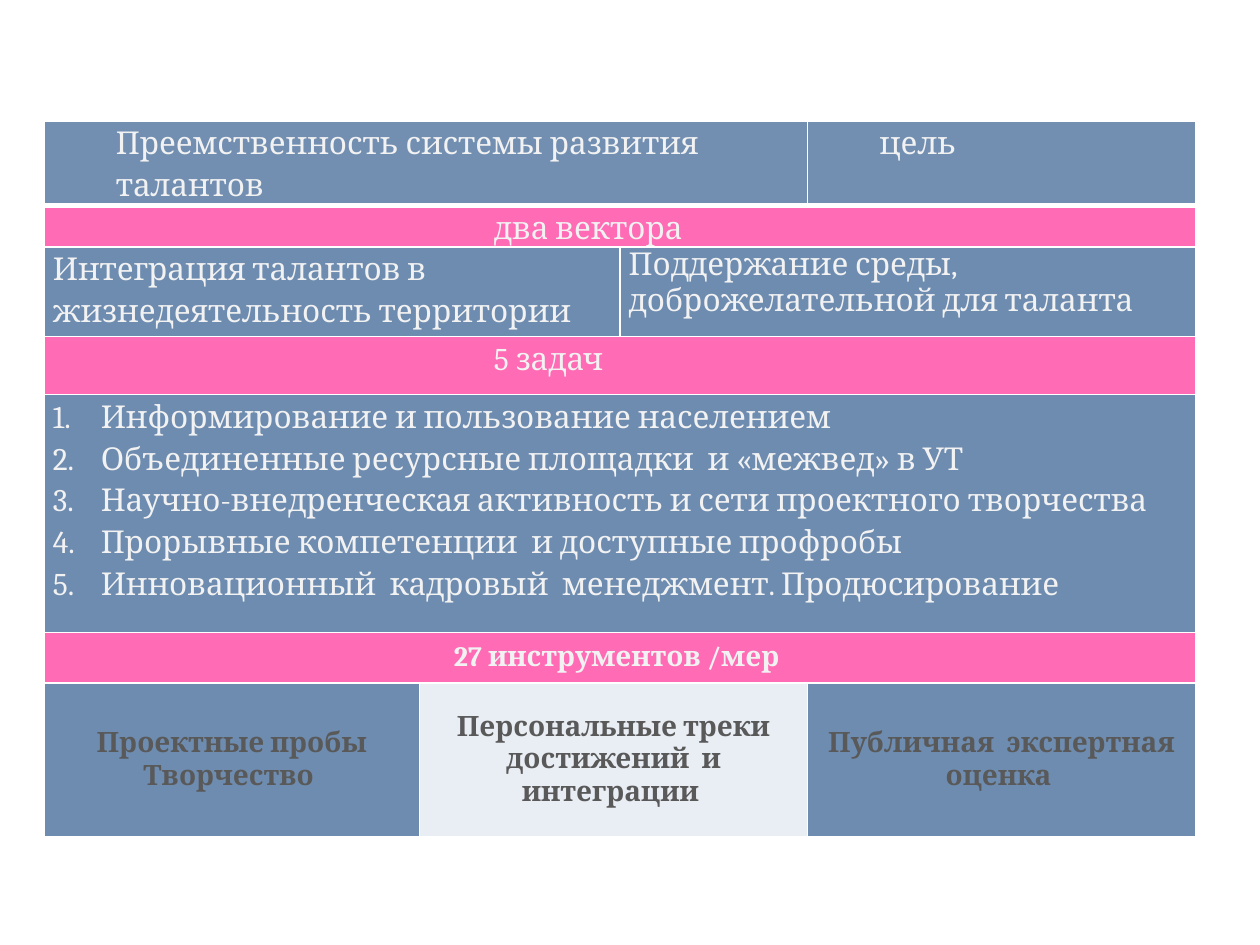
from dataclasses import dataclass

from lxml import etree
from pptx import Presentation
from pptx.dml.color import RGBColor
from pptx.enum.text import MSO_ANCHOR, PP_ALIGN
from pptx.oxml.ns import qn
from pptx.table import Table, _Cell
from pptx.util import Inches, Pt

MIDDLE, TOP = MSO_ANCHOR.MIDDLE, MSO_ANCHOR.TOP
CENTER, LEFT = PP_ALIGN.CENTER, PP_ALIGN.LEFT
BLUE = RGBColor(0x37, 0x60, 0x92)
PINK = RGBColor(0xFF, 0x33, 0x99)
PALE = RGBColor(0xE9, 0xED, 0xF4)
WHITE = RGBColor(0xFF, 0xFF, 0xFF)
LIGHT = RGBColor(0xF2, 0xF2, 0xF2)
GRAY = RGBColor(0x59, 0x59, 0x59)
FONT = "Cambria"
COLS = (2.98, 1.59, 1.49, 3.08)
ROWS = (0.67, 0.31, 0.71, 0.46, 1.89, 0.4, 1.22)


@dataclass(frozen=True)
class Style:
    size: int = 18
    color: RGBColor = LIGHT
    bold: bool = False
    align: PP_ALIGN = LEFT
    anchor: MSO_ANCHOR = TOP
    space: float = 1.15
    indent: float = 0
    hang: float = 0


@dataclass(frozen=True)
class Block:
    row: int
    col: int
    span: int
    lines: tuple[str, ...]
    style: Style
    fill: RGBColor = BLUE
    alpha: int = 72


BODY = Style()
GOAL = Style(indent=0.5)
HEAD = Style(indent=3.5)
TIGHT = Style(space=1.0)
LIST = Style(indent=0.38, hang=0.38)
TOOLS = Style(16, LIGHT, True, CENTER, MIDDLE, 1.0)
TOOL = Style(16, GRAY, True, CENTER, MIDDLE, 1.0)

TASKS = (
    "Информирование и пользование населением",
    "Объединенные ресурсные площадки  и «межвед» в УТ",
    "Научно-внедренческая активность и сети проектного творчества",
    "Прорывные компетенции  и доступные профробы",
    "Инновационный  кадровый  менеджмент. Продюсирование",
)
BLOCKS = (
    Block(0, 0, 3, ("Преемственность системы развития талантов",), GOAL, alpha=70),
    Block(0, 3, 1, ("цель",), GOAL, alpha=70),
    Block(1, 0, 4, ("два вектора",), HEAD, PINK),
    Block(2, 0, 2, ("Интеграция талантов в жизнедеятельность территории",), BODY),
    Block(2, 2, 2, ("Поддержание среды, доброжелательной для таланта",), TIGHT),
    Block(3, 0, 4, ("5 задач",), HEAD, PINK),
    Block(4, 0, 4, TASKS, LIST),
    Block(5, 0, 4, ("27 инструментов /мер ",), TOOLS, PINK),
    Block(6, 0, 1, ("Проектные пробы", "Творчество "), TOOL),
    Block(6, 1, 2, ("Персональные треки достижений  и интеграции ",), TOOL, PALE, 100),
    Block(6, 3, 1, ("Публичная  экспертная оценка ",), TOOL),
)


def paint(cell: _Cell, block: Block) -> None:
    cell.fill.solid()
    cell.fill.fore_color.rgb = block.fill
    props = cell._tc.get_or_add_tcPr()
    if block.alpha < 100:
        tint = props.find(f".//{qn('a:srgbClr')}")
        etree.SubElement(tint, qn("a:alpha"), val=str(block.alpha * 1000))
    for spot, side in enumerate("LRTB"):
        thick = (block.row == 0 and side == "B") or (block.row == 1 and side == "T")
        line = etree.Element(qn(f"a:ln{side}"), w=str(Pt(3 if thick else 1)))
        solid = etree.SubElement(line, qn("a:solidFill"))
        etree.SubElement(solid, qn("a:srgbClr"), val=str(WHITE))
        props.insert(spot, line)


def write(cell: _Cell, lines: tuple[str, ...], style: Style) -> None:
    cell.vertical_anchor = style.anchor
    frame = cell.text_frame
    frame.text = "\n".join(lines)
    for para in frame.paragraphs:
        para.alignment = style.align
        para.line_spacing = style.space
        props = para._p.get_or_add_pPr()
        props.set("marL", str(Inches(style.indent)))
        props.set("indent", str(-Inches(style.hang)))
        if style.hang:
            etree.SubElement(props, qn("a:buFont"), typeface=FONT)
            etree.SubElement(props, qn("a:buAutoNum"), type="arabicPeriod")
        font = para.font
        font.name = FONT
        font.size = Pt(style.size)
        font.bold = style.bold
        font.color.rgb = style.color


def place(table: Table, block: Block) -> None:
    last = block.col + block.span - 1
    cell = table.cell(block.row, block.col)
    if block.span > 1:
        cell.merge(table.cell(block.row, last))
    for col in range(block.col, last + 1):
        part = table.cell(block.row, col)
        part.margin_left = part.margin_right = Inches(0.07)
        part.margin_top = part.margin_bottom = 0
        paint(part, block)
    write(cell, block.lines, block.style)


def main() -> None:
    deck = Presentation()
    deck.slide_width, deck.slide_height = Inches(10), Inches(7.5)
    slide = deck.slides.add_slide(deck.slide_layouts[6])
    table = slide.shapes.add_table(
        len(ROWS), len(COLS), Inches(0.35), Inches(0.96),
        Inches(sum(COLS)), Inches(sum(ROWS)),
    ).table
    table.first_row = table.horz_banding = False
    for col, width in zip(table.columns, COLS):
        col.width = Inches(width)
    for row, height in zip(table.rows, ROWS):
        row.height = Inches(height)
    for block in BLOCKS:
        place(table, block)
    deck.save("out.pptx")


if __name__ == "__main__":
    main()
